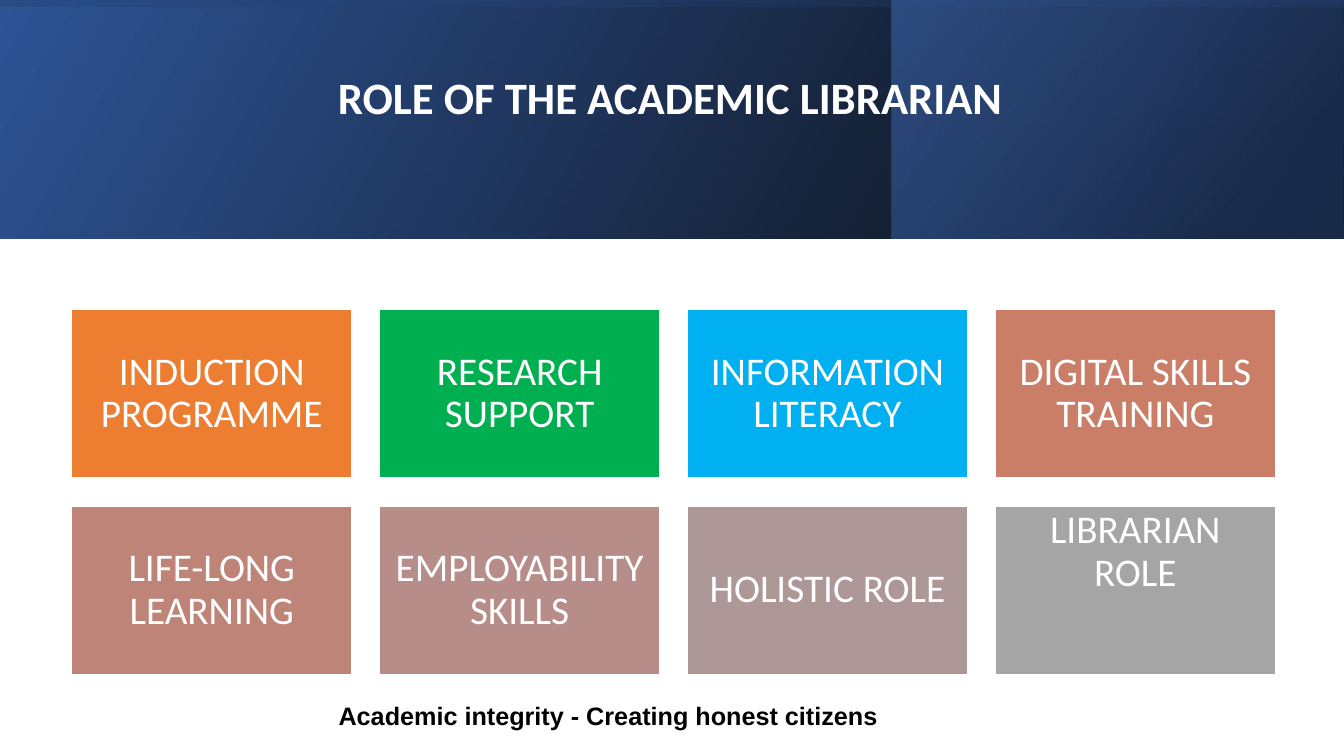
"""Build the slide on the role of the academic librarian."""
from lxml.etree import SubElement
from pptx import Presentation
from pptx.dml.color import RGBColor as RGB
from pptx.enum.shapes import MSO_SHAPE as SHAPE
from pptx.enum.text import MSO_ANCHOR as ANCHOR, PP_ALIGN as ALIGN
from pptx.oxml.ns import qn
from pptx.util import Inches, Pt

TITLE = "ROLE OF THE ACADEMIC LIBRARIAN"
FOOTER = "Academic integrity - Creating honest citizens"
ROLES = [
    ("INDUCTION PROGRAMME", "ED7D31"),
    ("RESEARCH SUPPORT", "00B050"),
    ("INFORMATION LITERACY", "00B0F0"),
    ("DIGITAL SKILLS TRAINING", "CA7E67"),
    ("LIFE-LONG LEARNING", "BF8478"),
    ("EMPLOYABILITY SKILLS", "B68D88"),
    ("HOLISTIC ROLE", "AD9897"),
    ("LIBRARIAN ROLE", "A5A5A5"),
]
BANNER = [
    dict(box=(0, 0, 13.33, 2.37), angle=30,
         stops=[(0, "000000", 96), (100, "2F5597", 100)]),
    dict(box=(8.84, 0, 4.48, 2.37), angle=40,
         stops=[(19, "203864", 68), (100, "4472C4", 48)]),
    dict(box=(5.48, -5.48, 2.37, 13.33), angle=10, rotation=270,
         stops=[(23, "2F5597", 16), (99, "000000", 45)]),
]
THEME = dict(white="FFFFFF", black="000000", font="Calibri", footer_font="Arial",
             title=32, tile=28, footer=18)
COLS = 4
LEFT, RIGHT, TOP = 0.71, 12.65, 3.07
TILE_W, TILE_H, ROW_STEP = 2.78, 1.67, 1.95
COL_STEP = (RIGHT - LEFT - TILE_W) / (COLS - 1)


def put_text(sp, text, *, size, color=THEME["white"], font=THEME["font"], bold=False,
             align=ALIGN.CENTER, anchor=ANCHOR.MIDDLE, spacing=0.9,
             margins=(0.1, 0.05, 0.1, 0.05)):
    """Write one formatted paragraph into a shape."""
    tf = sp.text_frame
    tf.word_wrap = True
    tf.vertical_anchor = anchor
    tf.margin_left, tf.margin_top, tf.margin_right, tf.margin_bottom = map(Inches, margins)
    p = tf.paragraphs[0]
    p.alignment, p.line_spacing = align, spacing
    r = p.add_run()
    r.text = text
    r.font.name, r.font.size, r.font.bold = font, Pt(size), bold
    r.font.color.rgb = RGB.from_string(color)


def add_rect(s, box):
    """Add a rectangle without a shadow."""
    sp = s.shapes.add_shape(SHAPE.RECTANGLE, *map(Inches, box))
    sp.shadow.inherit = False
    return sp


def add_banner(s, box, angle, stops, rotation=0):
    """Add one mirrored, translucent gradient layer."""
    sp = add_rect(s, box)
    sp.rotation = rotation
    sp.line.fill.background()
    sp.element.spPr.find(qn("a:xfrm")).set("flipH", "1")
    sp.fill.gradient()
    sp.fill.gradient_angle = angle
    for stop, (position, color, alpha) in zip(sp.fill.gradient_stops, stops):
        stop.position = position / 100
        stop.color.rgb = RGB.from_string(color)
    for node, (_, _, alpha) in zip(sp.element.spPr.iter(qn("a:srgbClr")), stops):
        SubElement(node, qn("a:alpha")).set("val", str(alpha * 1000))


def add_tile(s, index, text, color):
    """Add one role tile at its place in the grid."""
    row, col = divmod(index, COLS)
    sp = add_rect(s, (LEFT + col * COL_STEP, TOP + row * ROW_STEP, TILE_W, TILE_H))
    sp.fill.solid()
    sp.fill.fore_color.rgb = RGB.from_string(color)
    sp.line.color.rgb = RGB.from_string(THEME["white"])
    sp.line.width = Pt(1)
    last = index == len(ROLES) - 1
    put_text(sp, text, size=THEME["tile"],
             anchor=ANCHOR.TOP if last else ANCHOR.MIDDLE,
             margins=(0.12, 0.04 if last else 0.12, 0.12, 0.12))


def main():
    """Assemble and save the slide."""
    prs = Presentation()
    prs.slide_width, prs.slide_height = Inches(13.33), Inches(7.5)
    s = prs.slides.add_slide(prs.slide_layouts[6])
    for layer in BANNER:
        add_banner(s, **layer)
    title = s.shapes.add_textbox(*map(Inches, (0.57, 0.38, 12.26, 1.72)))
    put_text(title, TITLE, size=THEME["title"], bold=True, margins=(0.1, 0.05, 0.2, 0.54))
    for index, (text, color) in enumerate(ROLES):
        add_tile(s, index, text, color)
    footer = s.shapes.add_textbox(*map(Inches, (3.26, 6.9, 6.03, 0.4)))
    put_text(footer, FOOTER, size=THEME["footer"], color=THEME["black"],
             font=THEME["footer_font"], bold=True, align=ALIGN.LEFT,
             anchor=ANCHOR.TOP, spacing=1.0)
    prs.save("out.pptx")


if __name__ == "__main__":
    main()
